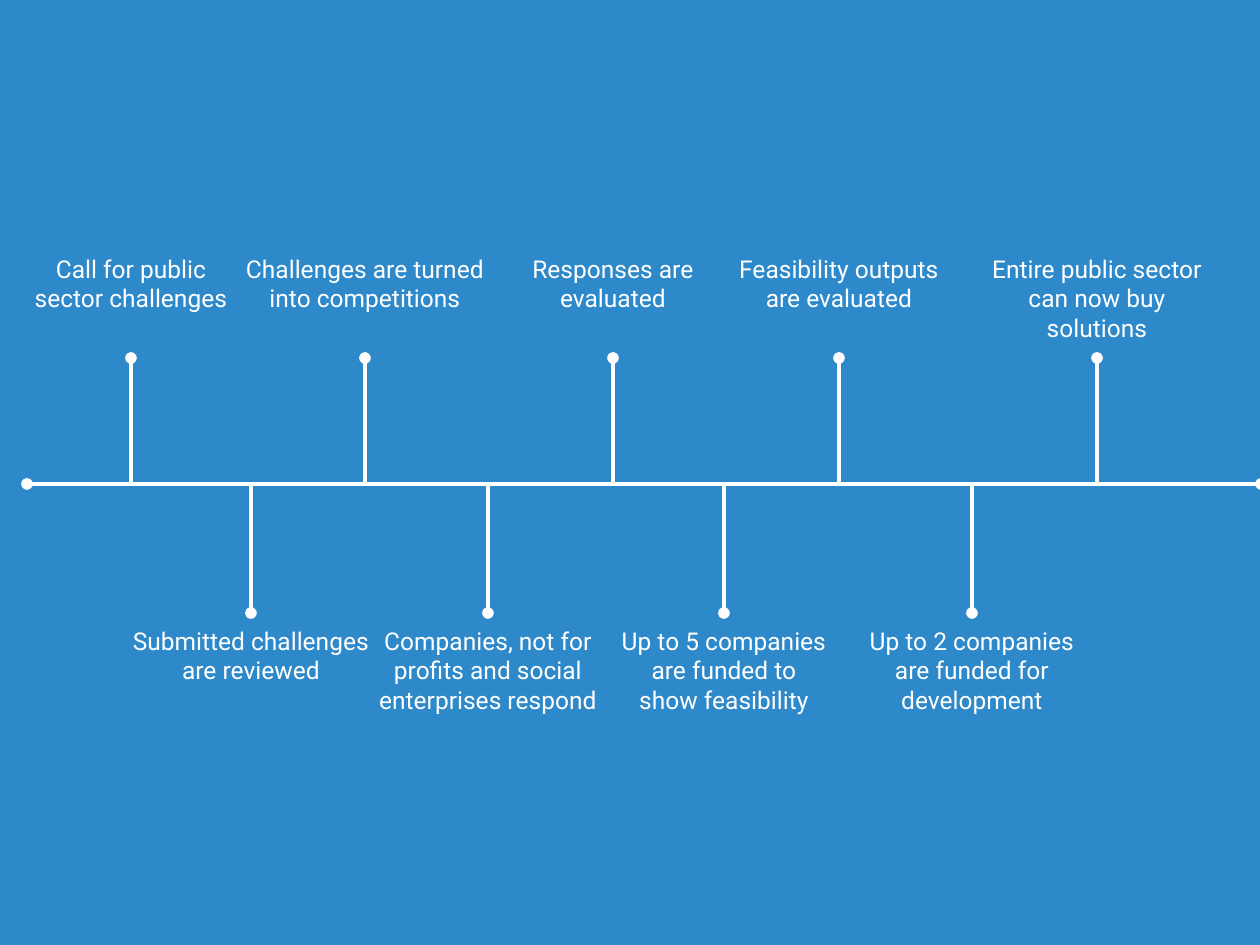
import pptx
import pptx.dml.color
import pptx.enum.shapes
import pptx.enum.text
import pptx.oxml
import pptx.oxml.ns
import pptx.util
from lxml import etree

# Content: stem x, label width, label height, paragraphs
STEPS_ABOVE = [
    (131, 236, 117, ["Call for public", "sector challenges"]),
    (365, 266, 117, ["Challenges are turned", "into competitions"]),
    (613, 266, 117, ["Responses are", "evaluated"]),
    (839, 266, 117, ["Feasibility outputs", "are evaluated"]),
    (1097, 266, 117, ["Entire public sector", "can now buy solutions"]),
]
STEPS_BELOW = [
    (251, 266, 117, ["Submitted challenges", "are reviewed"]),
    (488, 266, 150, ["Companies, not for profits and social enterprises respond"]),
    (724, 266, 150, ["Up to 5 companies", "are funded to", "show feasibility"]),
    (972, 266, 150, ["Up to 2 companies", "are funded for development"]),
]

BLUE = pptx.dml.color.RGBColor(0x2E, 0x89, 0xCA)
WHITE = pptx.dml.color.RGBColor(0xFF, 0xFF, 0xFF)
FONT = "Roboto"
SLIDE_W, SLIDE_H = 1260, 945
AXIS_LEFT, AXIS_RIGHT, AXIS_Y = 27, 1261, 484
TOP_DOT_Y, BOTTOM_DOT_Y = 358, 613
INSET = 13


def px(n):
    return pptx.util.Emu(round(n * 914400 / 126))


def add_line(slide, x1, y1, x2, y2, ends):
    line = slide.shapes.add_connector(
        pptx.enum.shapes.MSO_CONNECTOR.STRAIGHT, px(x1), px(y1), px(x2), px(y2))
    line.line.color.rgb = WHITE
    line.line.width = pptx.util.Pt(2.25)
    ln = line.line._get_or_add_ln()
    for end in ends:
        etree.SubElement(ln, pptx.oxml.ns.qn(f"a:{end}"), type="oval")
    etree.SubElement(line._element.spPr, pptx.oxml.ns.qn("a:effectLst"))


def add_label(slide, center, top, width, height, lines):
    box = slide.shapes.add_textbox(
        px(center - width / 2), px(top), px(width), px(height))
    tf = box.text_frame
    tf.word_wrap = True
    tf.margin_left = tf.margin_right = tf.margin_top = tf.margin_bottom = px(INSET)
    tf.text = "\n".join(lines)
    for p in tf.paragraphs:
        p.alignment = pptx.enum.text.PP_ALIGN.CENTER
        p.font.name = FONT
        p.font.size = pptx.util.Pt(14)
        p.font.color.rgb = WHITE


def main():
    prs = pptx.Presentation()
    prs.slide_width, prs.slide_height = px(SLIDE_W), px(SLIDE_H)
    slide = prs.slides.add_slide(prs.slide_layouts[6])

    # Blue backdrop
    sp = slide.shapes.add_shape(
        pptx.enum.shapes.MSO_SHAPE.RECTANGLE, 0, 0, px(SLIDE_W), px(SLIDE_H))
    sp.shadow.inherit = False
    sp.fill.solid()
    sp.fill.fore_color.rgb = BLUE
    sp.line.fill.background()

    # Time axis
    add_line(slide, AXIS_LEFT, AXIS_Y, AXIS_RIGHT, AXIS_Y, ["headEnd", "tailEnd"])

    # Stems and labels; labels above end at the dot, labels below start at it
    for steps, dot_y, above in ((STEPS_ABOVE, TOP_DOT_Y, True),
                                (STEPS_BELOW, BOTTOM_DOT_Y, False)):
        for x, width, height, lines in steps:
            add_line(slide, x, AXIS_Y, x, dot_y, ["tailEnd"])
            top = dot_y - height if above else dot_y
            add_label(slide, x, top, width, height, lines)

    prs.save("out.pptx")


if __name__ == "__main__":
    main()
